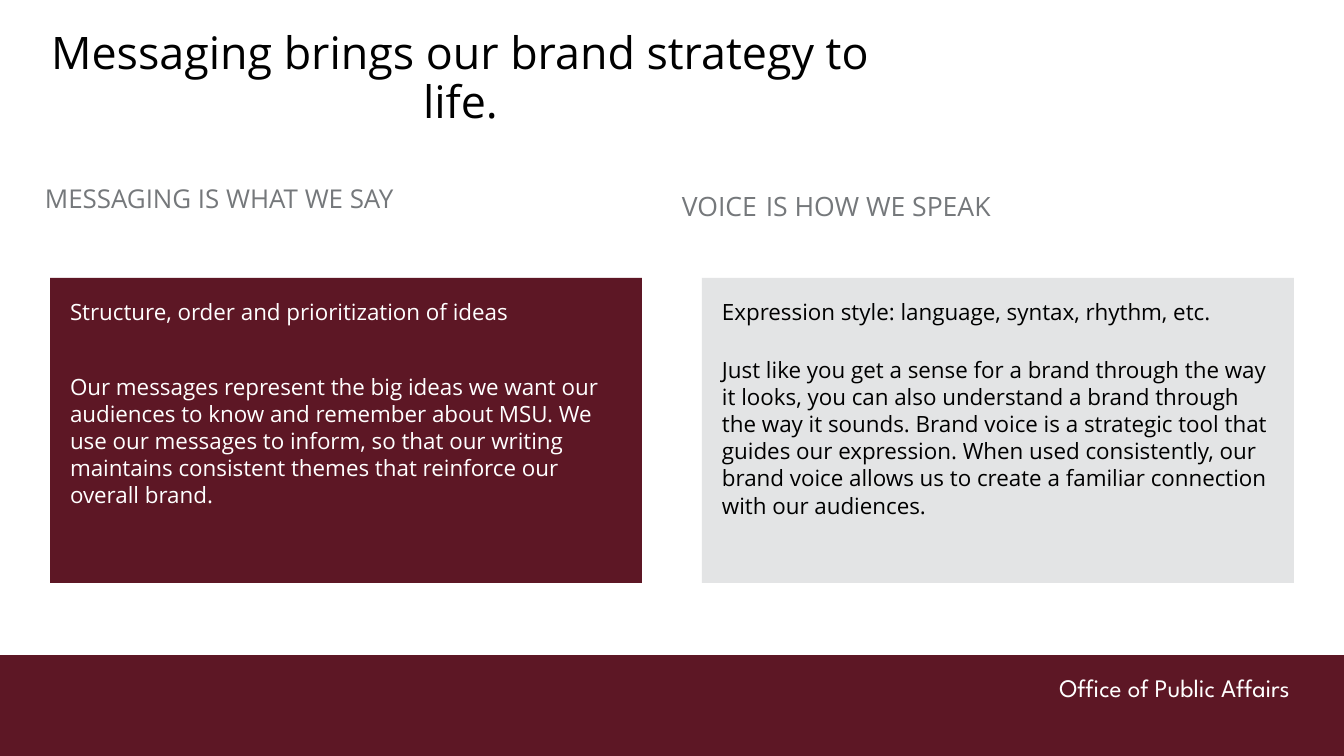
from pptx import Presentation
from pptx import util as u
from pptx.dml import color
from pptx.enum import shapes, text

PX_PER_INCH = 100.8
MAROON, SILVER, GRAY = "5D1725", "E3E4E5", "75787B"
WHITE, BLACK = "FFFFFF", "000000"


def px(length):
    return u.Emu(round(length * 914400 / PX_PER_INCH))


def rgb(value):
    return color.RGBColor.from_string(value)


def write(paragraph, words, size=16, ink=BLACK, face="Open Sans",
          align=text.PP_ALIGN.LEFT, spacing=1.0, before=0):
    paragraph.alignment = align
    paragraph.line_spacing = spacing
    if before:
        paragraph.space_before = u.Pt(before)
    run = paragraph.add_run()
    run.text = words
    run.font.size = u.Pt(size)
    run.font.name = face
    run.font.color.rgb = rgb(ink)


class Board:
    def __init__(self, deck):
        self.slide = deck.slides.add_slide(deck.slide_layouts[6])

    def label(self, left, top, width, height, words, **style):
        frame = self.slide.shapes.add_textbox(
            px(left), px(top), px(width), px(height)).text_frame
        frame.word_wrap = True
        write(frame.paragraphs[0], words, **style)
        return frame.paragraphs[0]

    def block(self, left, top, width, height, fill):
        rect = self.slide.shapes.add_shape(
            shapes.MSO_SHAPE.RECTANGLE, px(left), px(top), px(width), px(height))
        rect.shadow.inherit = False
        rect.fill.solid()
        rect.fill.fore_color.rgb = rgb(fill)
        rect.line.fill.background()
        return rect

    def panel(self, left, fill, ink, lead, detail, gap):
        frame = self.block(left, 278, 592, 305, fill).text_frame
        frame.word_wrap = True
        frame.vertical_anchor = text.MSO_ANCHOR.TOP
        frame.margin_left = frame.margin_right = px(20)
        frame.margin_top = frame.margin_bottom = px(20)
        write(frame.paragraphs[0], lead, ink=ink, spacing=1.01)
        write(frame.add_paragraph(), detail, ink=ink, spacing=1.01, before=gap)


def main():
    deck = Presentation()
    deck.slide_width, deck.slide_height = px(1344), px(756)
    board = Board(deck)

    board.block(0, 655, 1344, 101, MAROON)
    board.label(795, 667, 505, 40, "Office of Public Affairs", size=18, ink=WHITE,
                face="League Spartan", align=text.PP_ALIGN.RIGHT)
    board.label(8, 26, 905, 120, "Messaging brings our brand strategy to life.",
                size=32, align=text.PP_ALIGN.CENTER, spacing=0.9)

    board.label(35, 178, 398, 46, "MESSAGING IS WHAT WE SAY", size=18.5, ink=GRAY)
    voice = board.label(672, 178, 423, 56, "VOICE", size=19, ink=GRAY)
    write(voice, " ", size=24, ink=GRAY)
    write(voice, "IS HOW WE SPEAK", size=19, ink=GRAY)

    board.panel(
        50, MAROON, WHITE, "Structure, order and prioritization of ideas",
        "Our messages represent the big ideas we want our audiences to know and "
        "remember about MSU. We use our messages to inform, so that our writing "
        "maintains consistent themes that reinforce our overall brand.", 34)
    board.panel(
        702, SILVER, BLACK, "Expression style: language, syntax, rhythm, etc.",
        "Just like you get a sense for a brand through the way it looks, you can "
        "also understand a brand through the way it sounds. Brand voice is a "
        "strategic tool that guides our expression. When used consistently, our "
        "brand voice allows us to create a familiar connection with our audiences.",
        22)

    deck.save("out.pptx")


if __name__ == "__main__":
    main()
